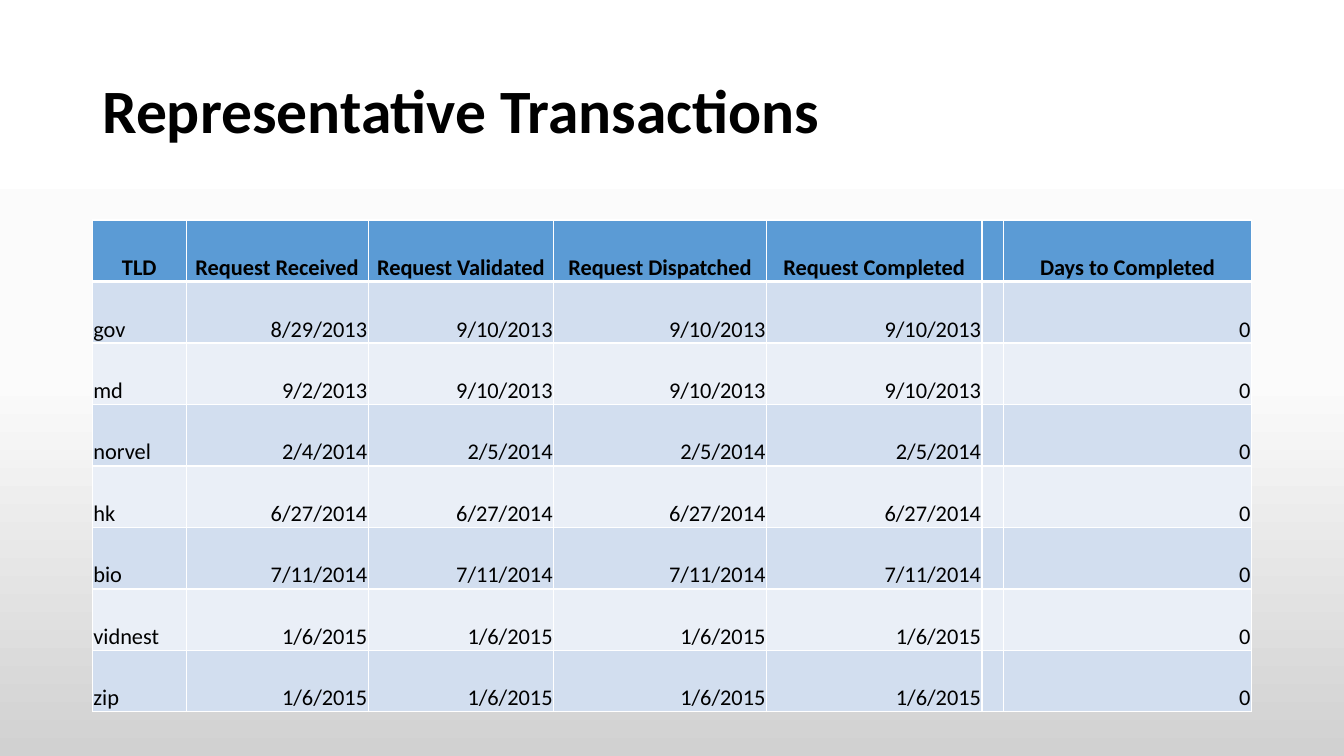
"""Build the Representative Transactions slide."""
from copy import deepcopy

from lxml import etree
from pptx import Presentation
from pptx.dml.color import RGBColor
from pptx.enum.text import MSO_ANCHOR, PP_ALIGN
from pptx.oxml.ns import qn
from pptx.util import Pt

LEFT, CENTER, RIGHT = PP_ALIGN.LEFT, PP_ALIGN.CENTER, PP_ALIGN.RIGHT
MIDDLE, BOTTOM = MSO_ANCHOR.MIDDLE, MSO_ANCHOR.BOTTOM

GRADIENT = [(0, "FFFFFF"), (0.5, "FBFBFB"), (1, "D1D1D1")]
HEADER_FILL, BANDS, BORDER = "5B9BD5", ("D2DEEF", "EAEFF7"), "FFFFFF"
TITLE_FONT = {"name": "Calibri", "size": Pt(44), "bold": True}
HEADER_FONT = {"name": "Calibri", "size": Pt(16), "bold": True}
BODY_FONT = {**HEADER_FONT, "bold": False}
CELL_FORMAT = {
    "vertical_anchor": BOTTOM,
    "margin_left": Pt(0.7),
    "margin_right": Pt(0.7),
    "margin_top": Pt(0.7),
    "margin_bottom": Pt(0),
}

COL_WIDTHS = [67, 130, 132.5, 152, 154, 15.5, 177]
ROW_HEIGHT = 43.92
HEADERS = ["TLD", "Request Received", "Request Validated", "Request Dispatched",
           "Request Completed", "", "Days to Completed"]
REQUESTS = [
    ("gov", "8/29/2013", "9/10/2013"),
    ("md", "9/2/2013", "9/10/2013"),
    ("norvel", "2/4/2014", "2/5/2014"),
    ("hk", "6/27/2014", "6/27/2014"),
    ("bio", "7/11/2014", "7/11/2014"),
    ("vidnest", "1/6/2015", "1/6/2015"),
    ("zip", "1/6/2015", "1/6/2015"),
]


def rgb(value):
    """Return the colour for a hex string."""
    return RGBColor.from_string(value)


def set_attrs(obj, values):
    """Set each attribute named in a dict."""
    for name, value in values.items():
        setattr(obj, name, value)


def set_background(slide):
    """Fill the slide background with the vertical gradient."""
    fill = slide.background.fill
    fill.gradient()
    fill.gradient_angle = 270
    stop_list = slide.element.find(".//" + qn("a:gsLst"))
    stop_list.append(deepcopy(stop_list[-1]))
    for stop, (position, color) in zip(fill.gradient_stops, GRADIENT):
        stop.position = position
        stop.color.rgb = rgb(color)


def write(p, text, font):
    """Add a black formatted run to a paragraph."""
    r = p.add_run()
    r.text = text
    set_attrs(r.font, font)
    r.font.color.rgb = rgb("000000")


def add_title(slide, text):
    """Add the slide title."""
    sp = slide.shapes.add_textbox(Pt(66), Pt(28.8), Pt(828), Pt(104.4))
    tf = sp.text_frame
    set_attrs(tf, {"word_wrap": True, "vertical_anchor": MIDDLE})
    p = tf.paragraphs[0]
    p.line_spacing = 0.9
    write(p, text, TITLE_FONT)


def set_borders(cell, top, bottom):
    """Draw the four cell borders, with top and bottom widths in points."""
    tc_pr = cell._tc.get_or_add_tcPr()
    for side, width in zip("LRTB", (1, 1, top, bottom)):
        ln = etree.SubElement(tc_pr, qn(f"a:ln{side}"), w=str(Pt(width)))
        fill = etree.SubElement(ln, qn("a:solidFill"))
        etree.SubElement(fill, qn("a:srgbClr"), val=BORDER)


def fill_cell(cell, text, row, col):
    """Format one cell by its row and column and write its text."""
    header = row == 0
    set_attrs(cell, CELL_FORMAT)
    set_borders(cell, 3 if row == 1 else 1, 3 if header else 1)
    cell.fill.solid()
    cell.fill.fore_color.rgb = rgb(HEADER_FILL if header else BANDS[(row - 1) % 2])
    if text:
        p = cell.text_frame.paragraphs[0]
        p.alignment = CENTER if header else RIGHT if col else LEFT
        write(p, text, HEADER_FONT if header else BODY_FONT)


def add_requests_table(slide):
    """Add the table of requests."""
    rows = [HEADERS]
    for tld, received, handled in REQUESTS:
        rows.append([tld, received, handled, handled, handled, "", "0"])
    frame = slide.shapes.add_table(
        len(rows), len(COL_WIDTHS), Pt(66), Pt(157.2),
        Pt(sum(COL_WIDTHS)), Pt(ROW_HEIGHT * len(rows)))
    table = frame.table
    for column, width in zip(table.columns, COL_WIDTHS):
        column.width = Pt(width)
    for i, texts in enumerate(rows):
        table.rows[i].height = Pt(ROW_HEIGHT)
        for j, text in enumerate(texts):
            fill_cell(table.cell(i, j), text, i, j)


def main():
    """Build and save the presentation."""
    prs = Presentation()
    set_attrs(prs, {"slide_width": Pt(960), "slide_height": Pt(540)})
    slide = prs.slides.add_slide(prs.slide_layouts[6])
    set_background(slide)
    add_title(slide, "Representative Transactions")
    add_requests_table(slide)
    prs.save("out.pptx")


if __name__ == "__main__":
    main()
